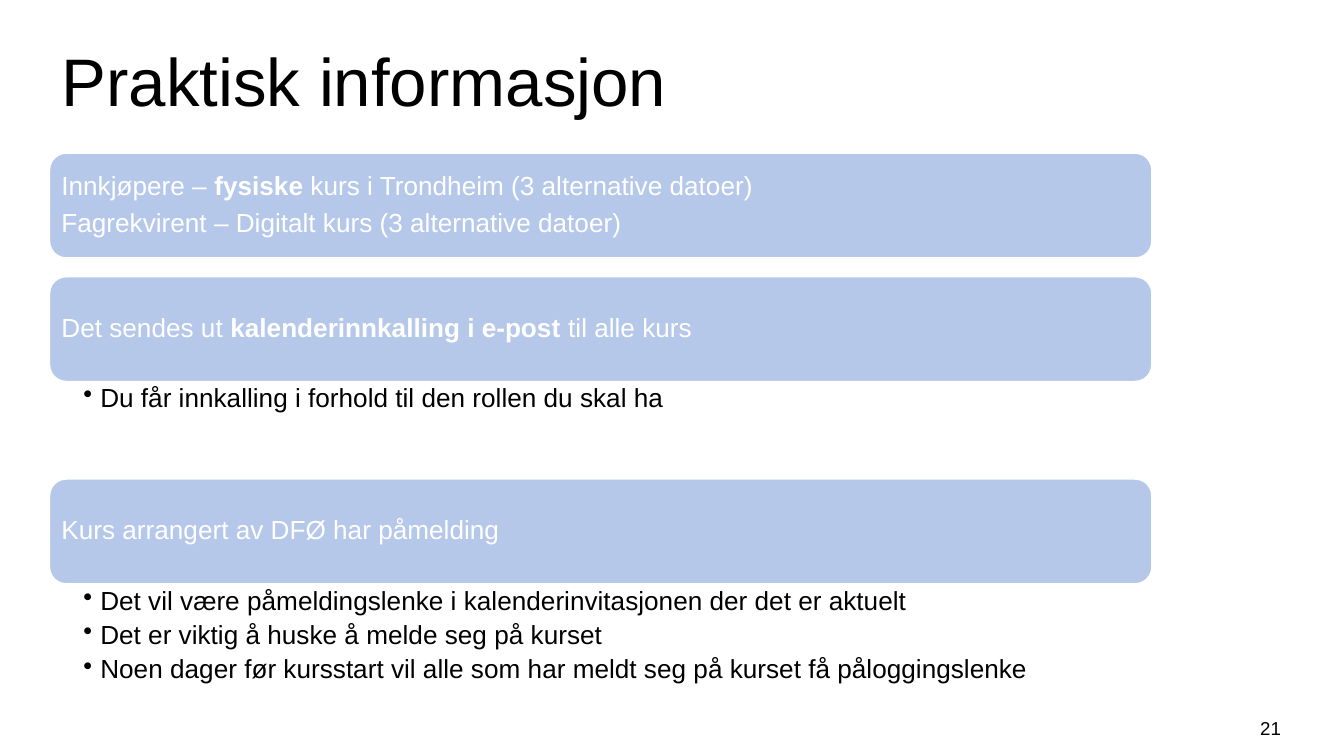
from lxml import etree
from pptx import Presentation
from pptx.dml.color import RGBColor
from pptx.enum.shapes import MSO_SHAPE
from pptx.enum.text import MSO_ANCHOR, PP_ALIGN
from pptx.oxml.ns import qn
from pptx.util import Pt

COLOURS = {"banner": "B6C8E9", "light": "FFFFFF", "dark": "000000"}
LEFT, WIDTH = 25.9, 591.8
BANNER_HEIGHT = 57.4


class InfoSlide:
    """Holds the style and the current slide."""

    font = "Arial"
    body_size = 14

    def __init__(self, slide):
        self.slide = slide

    def colour(self, name):
        return RGBColor.from_string(COLOURS[name])

    def style(self, font, size, colour, bold=False):
        font.name = self.font
        font.size = Pt(size)
        font.bold = bold
        font.color.rgb = self.colour(colour)

    def frame(self, shape, anchor, insets):
        frame = shape.text_frame
        frame.word_wrap = True
        frame.vertical_anchor = anchor
        (frame.margin_left, frame.margin_top,
         frame.margin_right, frame.margin_bottom) = map(Pt, insets)
        return frame

    def paragraphs(self, frame, count, space_after):
        """Yield the paragraphs of a body text, spaced alike."""
        for index in range(count):
            paragraph = frame.add_paragraph() if index else frame.paragraphs[0]
            paragraph.alignment = PP_ALIGN.LEFT
            paragraph.line_spacing = 0.9
            paragraph.space_after = Pt(space_after)
            yield paragraph

    def label(self, text, box, size, anchor, align=PP_ALIGN.LEFT):
        shape = self.slide.shapes.add_textbox(*map(Pt, box))
        frame = self.frame(shape, anchor, (7.2, 3.6, 7.2, 3.6))
        frame.text = text
        frame.paragraphs[0].alignment = align
        self.style(frame.paragraphs[0].runs[0].font, size, "dark")

    def banner(self, top, lines):
        """Each line is a list of text pieces; every second one is bold."""
        shape = self.slide.shapes.add_shape(
            MSO_SHAPE.ROUNDED_RECTANGLE, Pt(LEFT), Pt(top), Pt(WIDTH), Pt(BANNER_HEIGHT))
        shape.shadow.inherit = False
        shape.fill.solid()
        shape.fill.fore_color.rgb = self.colour("banner")
        shape.line.color.rgb = self.colour("light")
        shape.line.width = Pt(2)
        frame = self.frame(shape, MSO_ANCHOR.MIDDLE, (4.2,) * 4)
        for paragraph, pieces in zip(self.paragraphs(frame, len(lines), 5), lines):
            for index, piece in enumerate(pieces):
                run = paragraph.add_run()
                run.text = piece
                self.style(run.font, self.body_size, "light", bold=index % 2 == 1)

    def bullets(self, top, height, points):
        shape = self.slide.shapes.add_textbox(Pt(LEFT), Pt(top), Pt(WIDTH), Pt(height))
        frame = self.frame(shape, MSO_ANCHOR.TOP, (18.8, 1.4, 7.9, 1.4))
        for paragraph, point in zip(self.paragraphs(frame, len(points), 3.3), points):
            paragraph.text = point
            paragraph.level = 1
            properties = paragraph._p.get_or_add_pPr()
            properties.set("marL", str(Pt(9)))
            properties.set("indent", str(-Pt(9)))
            etree.SubElement(properties, qn("a:buChar"), char="•")
            self.style(paragraph.runs[0].font, self.body_size, "dark")


def main():
    presentation = Presentation()
    presentation.slide_width, presentation.slide_height = Pt(720), Pt(405)
    info = InfoSlide(presentation.slides.add_slide(presentation.slide_layouts[6]))

    # Title and page number
    info.label("Praktisk informasjon", (LEFT, 16.6, 660, 51), 36, MSO_ANCHOR.BOTTOM)
    info.label("21", (667.4, 379.4, 26.6, 21.6), 10, MSO_ANCHOR.MIDDLE, PP_ALIGN.CENTER)

    # Courses by role
    info.banner(81.4, [
        ["Innkjøpere – ", "fysiske", " kurs i Trondheim (3 alternative datoer)"],
        ["Fagrekvirent – Digitalt kurs (3 alternative datoer)"],
    ])

    # Sections: banner top, banner text, height of the points, points
    sections = [
        (147.6, ["Det sendes ut ", "kalenderinnkalling i e-post ", "til alle kurs"], 51.1,
         ["Du får innkalling i forhold til den rollen du skal ha"]),
        (256.0, ["Kurs arrangert av DFØ har påmelding"], 54,
         ["Det vil være påmeldingslenke i kalenderinvitasjonen der det er aktuelt",
          "Det er viktig å huske å melde seg på kurset",
          "Noen dager før kursstart vil alle som har meldt seg på kurset få påloggingslenke"]),
    ]
    for top, heading, height, points in sections:
        info.banner(top, [heading])
        info.bullets(top + BANNER_HEIGHT, height, points)

    presentation.save("out.pptx")


if __name__ == "__main__":
    main()
